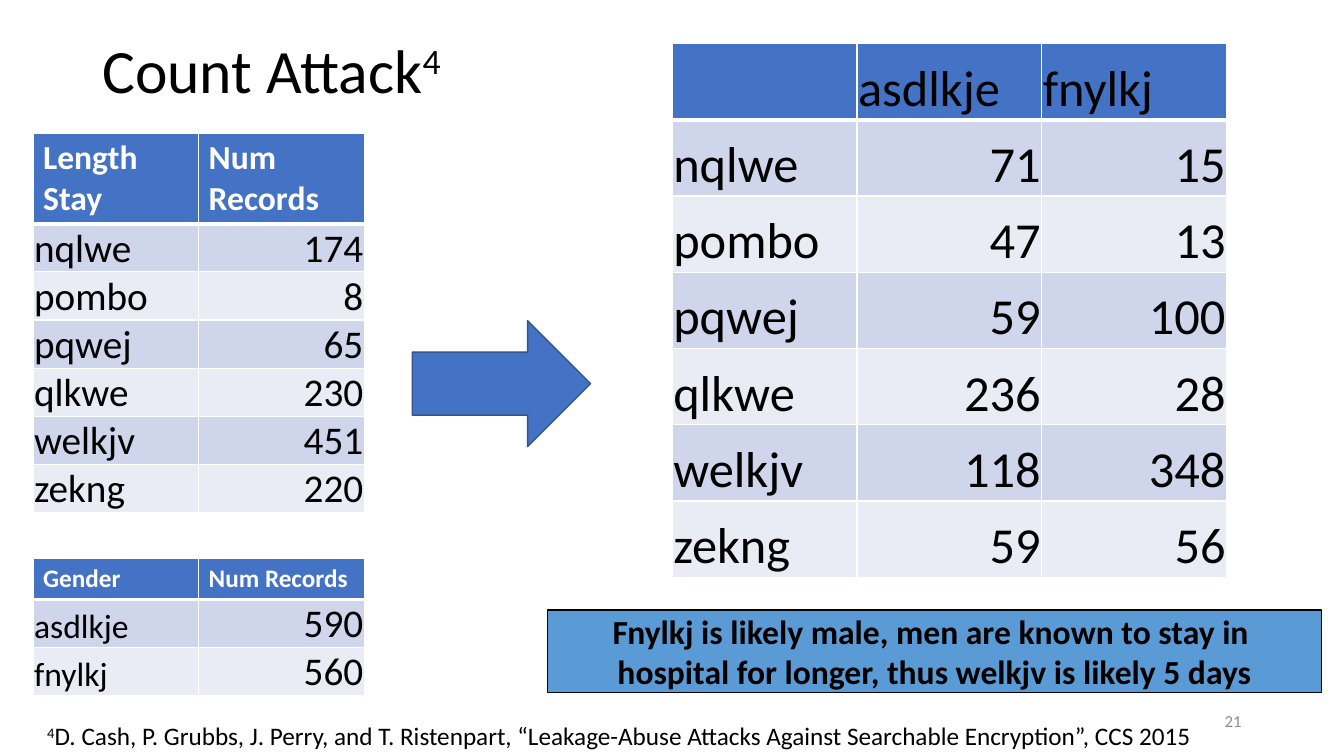
import pptx
import pptx.dml.color
import pptx.enum.shapes
import pptx.enum.text
import pptx.oxml
import pptx.oxml.ns
import pptx.util

Pt = pptx.util.Pt
ALIGN = pptx.enum.text.PP_ALIGN
ANCHOR = pptx.enum.text.MSO_ANCHOR
SHAPE = pptx.enum.shapes.MSO_SHAPE
COLORS = {
    "white": "FFFFFF", "black": "000000", "grey": "8C8C8C",
    "header": "4472C4", "band_dark": "CFD5EA", "band_light": "E9EBF5",
    "arrow_line": "325491", "callout": "5B9BD5",
}


def color(name):
    return pptx.dml.color.RGBColor.from_string(COLORS[name])


def write_text(frame, text, size=18, fill="black", bold=False, align=ALIGN.LEFT,
               anchor=ANCHOR.TOP, spacing=None, wrap=True):
    frame.word_wrap = wrap
    frame.vertical_anchor = anchor
    paragraph = frame.paragraphs[0]
    paragraph.alignment = align
    if spacing:
        paragraph.line_spacing = spacing
    for index, part in enumerate(text.split("^")):
        for number, line in enumerate(part.split("\n")):
            if number:
                paragraph.add_line_break()
            if not line:
                continue
            run = paragraph.add_run()
            run.text = line
            run.font.name = "Calibri"
            run.font.size = Pt(size)
            run.font.bold = bold
            run.font.color.rgb = color(fill)
            if index % 2:
                run._r.get_or_add_rPr().set("baseline", "30000")


class SlideBuilder:
    def __init__(self, slide):
        self.slide = slide

    def text_box(self, text, left, top, width, height, **style):
        shape = self.slide.shapes.add_textbox(Pt(left), Pt(top), Pt(width), Pt(height))
        write_text(shape.text_frame, text, **style)

    def shape(self, kind, left, top, width, height, fill, line, text="", **style):
        shape = self.slide.shapes.add_shape(kind, Pt(left), Pt(top), Pt(width), Pt(height))
        shape.shadow.inherit = False
        shape.fill.solid()
        shape.fill.fore_color.rgb = color(fill)
        shape.line.color.rgb = color(line)
        shape.line.width = Pt(1)
        if text:
            shape.text_frame.margin_left = shape.text_frame.margin_right = Pt(14.4)
            write_text(shape.text_frame, text, **style)

    def borders(self, cell, bottom):
        properties = cell._tc.get_or_add_tcPr()
        for side, width in (("L", 1), ("R", 1), ("T", 1), ("B", bottom)):
            properties.append(pptx.oxml.parse_xml(
                f'<a:ln{side} {pptx.oxml.ns.nsdecls("a")} w="{Pt(width)}"><a:solidFill>'
                f'<a:srgbClr val="{COLORS["white"]}"/></a:solidFill></a:ln{side}>'))

    def table(self, rows, left, top, width, header_height, row_height,
              header_style, label_size, value_size, tight_header=False):
        columns = len(rows[0])
        height = header_height + row_height * (len(rows) - 1)
        table = self.slide.shapes.add_table(
            len(rows), columns, Pt(left), Pt(top), Pt(width), Pt(height)).table
        for column in table.columns:
            column.width = Pt(width / columns)
        for row, values in enumerate(rows):
            table.rows[row].height = Pt(row_height if row else header_height)
            for column, value in enumerate(values):
                cell = table.cell(row, column)
                self.borders(cell, 1 if row else 3)
                cell.fill.solid()
                band = "band_dark" if row % 2 else "band_light"
                cell.fill.fore_color.rgb = color(band if row else "header")
                if value == "":
                    continue
                if row or tight_header:
                    cell.margin_left = cell.margin_right = cell.margin_top = Pt(0.75)
                    cell.margin_bottom = 0
                    cell.vertical_anchor = ANCHOR.BOTTOM
                style = header_style
                if row:
                    style = {"size": value_size if column else label_size,
                             "align": ALIGN.RIGHT if column else ALIGN.LEFT}
                self.cell_text(cell, str(value), style)

    def cell_text(self, cell, text, style):
        anchor = cell.vertical_anchor
        write_text(cell.text_frame, text, **style)
        cell.text_frame.vertical_anchor = None
        cell.text_frame.word_wrap = None
        cell.vertical_anchor = anchor


def main():
    presentation = pptx.Presentation()
    presentation.slide_width = Pt(960)
    presentation.slide_height = Pt(540)
    builder = SlideBuilder(presentation.slides.add_slide(presentation.slide_layouts[6]))

    builder.text_box("Count Attack^4", 66, 0, 828, 104.4, size=44,
                     anchor=ANCHOR.MIDDLE, spacing=0.9)
    builder.text_box(
        "^4^D. Cash, P. Grubbs, J. Perry, and T. Ristenpart, “Leakage-Abuse Attacks "
        "Against Searchable Encryption”, CCS 2015", 26.6, 511.2, 849, 29, wrap=False)

    length_stay = [("Length Stay", "Num Records"), ("nqlwe", 174), ("pombo", 8),
                   ("pqwej", 65), ("qlkwe", 230), ("welkjv", 451), ("zekng", 220)]
    gender = [("Gender", "Num Records"), ("asdlkje", 590), ("fnylkj", 560)]
    joint = [("", "asdlkje", "fnylkj"), ("nqlwe", 71, 15), ("pombo", 47, 13),
             ("pqwej", 59, 100), ("qlkwe", 236, 28), ("welkjv", 118, 348),
             ("zekng", 59, 56)]
    builder.table(length_stay, 23.6, 95, 236.6, 64.6, 34.1,
                  {"size": 24, "fill": "white", "bold": True}, 28, 28)
    builder.table(gender, 23.6, 399, 236.6, 29.2, 34.1,
                  {"size": 18, "fill": "white", "bold": True}, 24, 28)
    builder.shape(SHAPE.RIGHT_ARROW, 294.5, 229, 127.4, 90, "header", "arrow_line")
    builder.table(joint, 480.2, 31, 396, 54.5, 54.5, {"size": 36}, 36, 36,
                  tight_header=True)
    builder.shape(SHAPE.RECTANGLE, 391, 435.6, 553, 59, "callout", "black",
                  "Fnylkj is likely male, men are known to stay in \n"
                  "hospital for longer, thus welkjv is likely 5 days",
                  size=24, bold=True, align=ALIGN.CENTER, anchor=ANCHOR.MIDDLE)
    builder.text_box("21", 678, 500.4, 216, 28.8, size=12, fill="grey",
                     align=ALIGN.RIGHT, anchor=ANCHOR.MIDDLE)
    presentation.save("out.pptx")


if __name__ == "__main__":
    main()
